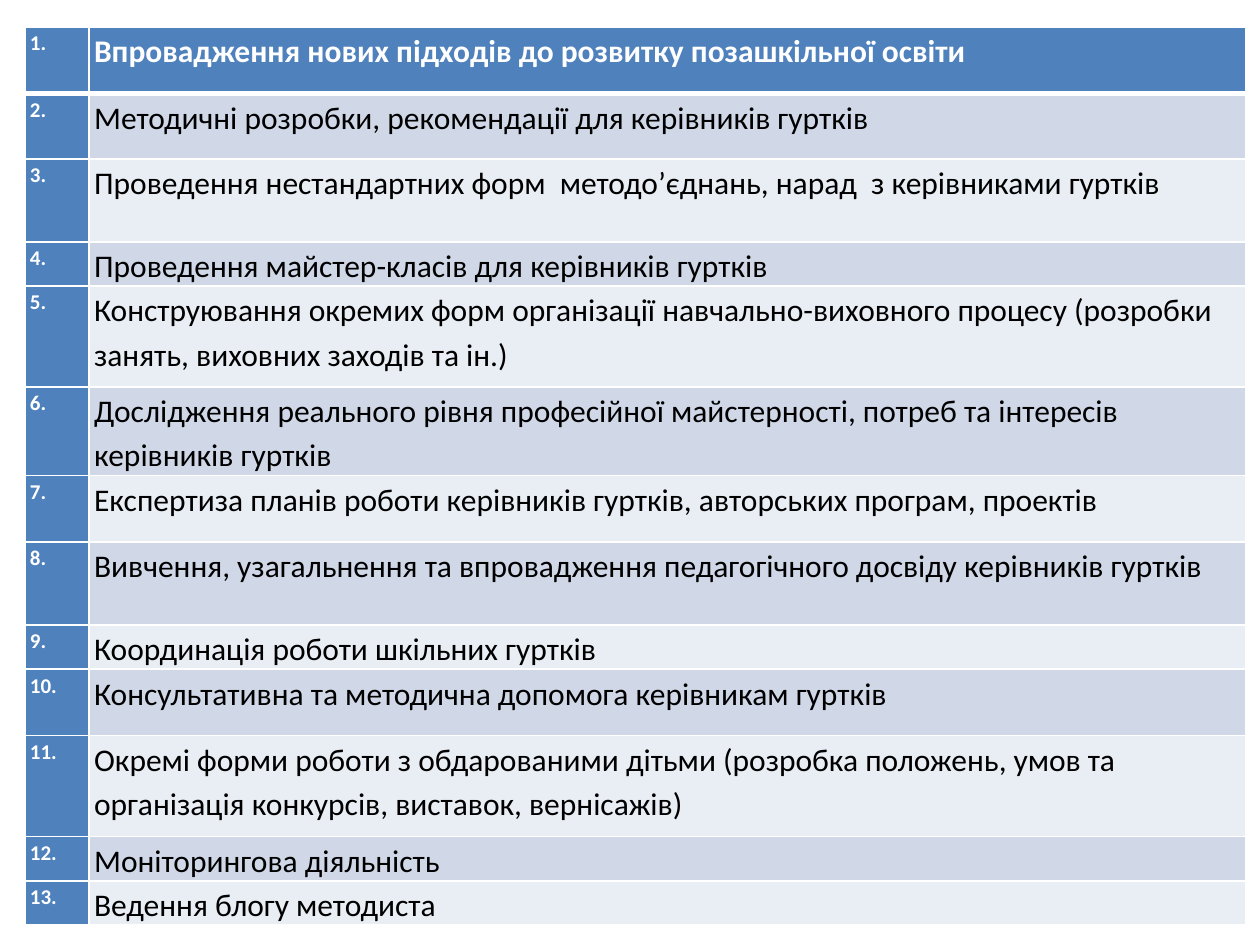
from lxml.etree import SubElement
from pptx import Presentation
from pptx.dml.color import RGBColor as RGB
from pptx.oxml.ns import qn
from pptx.util import Pt

COLORS = {
    "head": "4F81BD",
    "dark": "D0D8E8",
    "light": "E9EDF4",
    "white": "FFFFFF",
    "black": "000000",
}

# Row height in points, then the task
TASKS = [
    (38, "Впровадження нових підходів до розвитку позашкільної освіти"),
    (37.5, "Методичні розробки, рекомендації для керівників гуртків"),
    (47.5, "Проведення нестандартних форм  методо’єднань, нарад  з керівниками гуртків"),
    (24.8, "Проведення майстер-класів для керівників гуртків"),
    (57.6, "Конструювання окремих форм організації навчально-виховного процесу "
           "(розробки занять, виховних заходів та ін.)"),
    (49.7, "Дослідження реального рівня професійної майстерності, потреб та інтересів "
           "керівників гуртків"),
    (38, "Експертиза планів роботи керівників гуртків, авторських програм, проектів"),
    (47.5, "Вивчення, узагальнення та впровадження педагогічного досвіду керівників гуртків"),
    (24.8, "Координація роботи шкільних гуртків"),
    (38, "Консультативна та методична допомога керівникам гуртків"),
    (57.6, "Окремі форми роботи з обдарованими дітьми (розробка положень, умов та "
           "організація конкурсів, виставок, вернісажів)"),
    (24.8, "Моніторингова діяльність"),
    (24.8, "Ведення блогу методиста"),
]
WIDTHS = [36.7, 661]


def add_edges(cell, top, bottom):
    """Draw white cell borders; top and bottom are widths in points."""
    props = cell._tc.get_or_add_tcPr()
    edges = [("a:lnL", 1), ("a:lnR", 1), ("a:lnT", top), ("a:lnB", bottom)]
    for spot, (tag, width) in enumerate(edges):
        line = SubElement(props, qn(tag), w=str(Pt(width)))
        fill = SubElement(line, qn("a:solidFill"))
        SubElement(fill, qn("a:srgbClr"), val=COLORS["white"])
        props.insert(spot, line)


def fill_cell(cell, text, size, bold, ink, back):
    cell.margin_left = cell.margin_right = Pt(2.9)
    cell.margin_top = cell.margin_bottom = 0
    cell.fill.solid()
    cell.fill.fore_color.rgb = RGB.from_string(COLORS[back])
    cell.text = text
    para = cell.text_frame.paragraphs[0]
    para.line_spacing = 1.15
    font = para.font
    font.name = "Calibri"
    font.size = Pt(size)
    font.bold = bold
    font.color.rgb = RGB.from_string(COLORS[ink])


deck = Presentation()
deck.slide_width, deck.slide_height = Pt(720), Pt(540)
slide = deck.slides.add_slide(deck.slide_layouts[6])

height = sum(task[0] for task in TASKS)
frame = slide.shapes.add_table(len(TASKS), 2, Pt(14.2), Pt(15.3),
                               Pt(sum(WIDTHS)), Pt(height))
table = frame.table
table.first_col = True
for column, width in zip(table.columns, WIDTHS):
    column.width = Pt(width)

for row, (high, task) in enumerate(TASKS):
    table.rows[row].height = Pt(high)
    number, label = table.cell(row, 0), table.cell(row, 1)
    fill_cell(number, f"{row + 1}.", 12, True, "white", "head")
    if row == 0:
        fill_cell(label, task, 18, True, "white", "head")
    else:
        fill_cell(label, task, 18, False, "black", "dark" if row % 2 else "light")
    for cell in (number, label):
        add_edges(cell, top=3 if row == 1 else 1, bottom=3 if row == 0 else 1)

deck.save("out.pptx")
